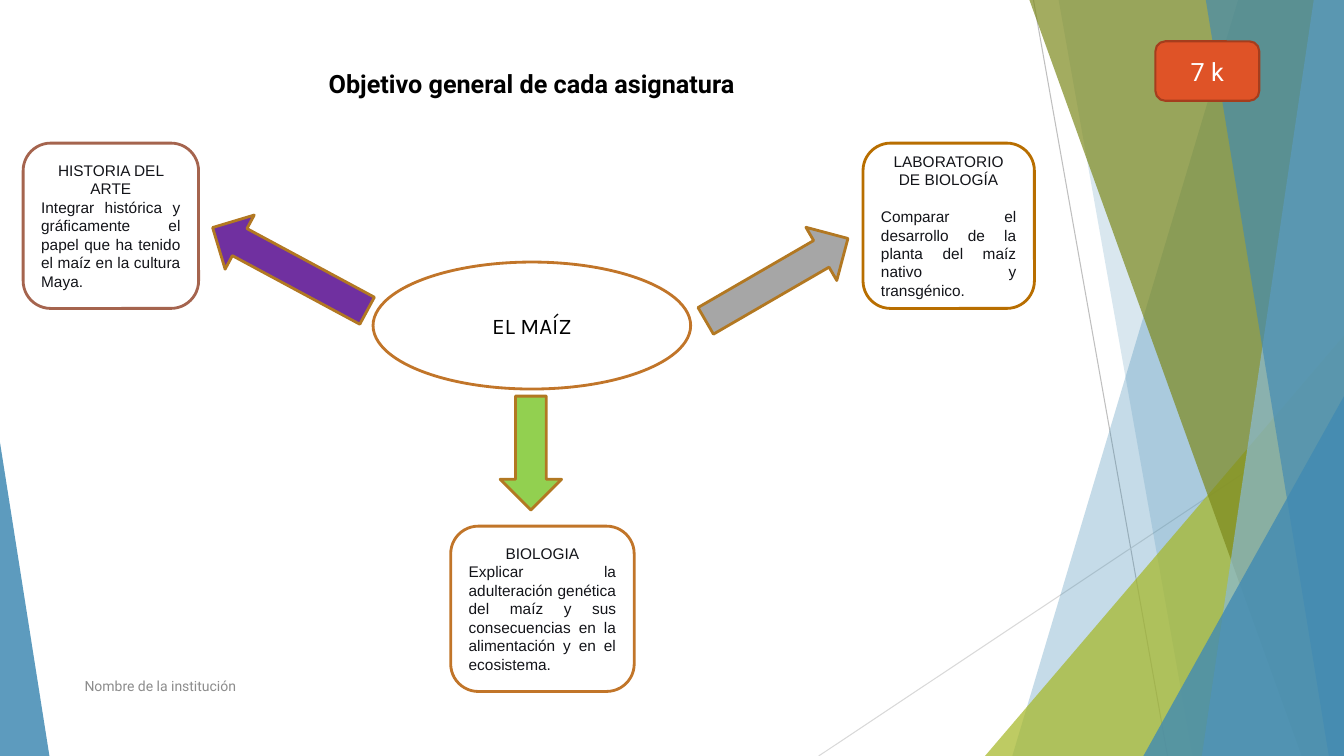
"""Build the slide that links maize to the general objective of each subject."""
from lxml import etree
from pptx import Presentation
from pptx.dml.color import RGBColor
from pptx.enum import shapes as sh, text as tx
from pptx.oxml import ns
from pptx.util import Inches, Pt

WIDTH, HEIGHT = 13.33, 7.5
WHITE = RGBColor(0xFF, 0xFF, 0xFF)
BLACK = RGBColor(0, 0, 0)
INK = RGBColor(0x13, 0x14, 0x19)
FOOTER_GRAY = RGBColor(0x8C, 0x8C, 0x8C)
RULE_DARK = RGBColor(0xBF, 0xBF, 0xBF)
RULE_LIGHT = RGBColor(0xD9, 0xD9, 0xD9)
BLUE = RGBColor(0x41, 0x8A, 0xB3)
PALE_BLUE = RGBColor(0x8A, 0xBA, 0xD4)
GREEN = RGBColor(0xA6, 0xB7, 0x27)
OLIVE = RGBColor(0x7D, 0x89, 0x1D)
ORANGE = RGBColor(0xDF, 0x53, 0x27)
RUST = RGBColor(0xA5, 0x3D, 0x1D)
COPPER = RGBColor(0xC1, 0x75, 0x29)
BROWN = RGBColor(0xA5, 0x64, 0x4E)
AMBER = RGBColor(0xB8, 0x6E, 0x00)
ARROW_EDGE = RGBColor(0xB2, 0x78, 0x22)
PURPLE = RGBColor(0x70, 0x30, 0xA0)
GRAY = RGBColor(0xA6, 0xA6, 0xA6)
LIME = RGBColor(0x92, 0xD0, 0x50)

TITLE = "Objetivo general de cada asignatura"
TOPIC = "EL MAÍZ"
FOOTER = "Nombre de la institución"
BADGE = "7 k"
SUBJECTS = [
    ("HISTORIA DEL ARTE",
     "Integrar histórica y gráficamente el papel que ha tenido el maíz en la cultura Maya.",
     (0.23, 1.42, 1.74), BROWN, 0),
    ("LABORATORIO DE BIOLOGÍA",
     "Comparar el desarrollo de la planta del maíz nativo y transgénico.",
     (8.56, 1.42, 1.7), AMBER, 13),
    ("BIOLOGIA",
     "Explicar la adulteración genética del maíz y sus consecuencias en la "
     "alimentación y en el ecosistema.",
     (4.47, 5.22, 1.82), COPPER, 0),
]
SUBJECT_HEIGHT, ARROW_WIDTH = 1.64, 0.61
ARROWS = [
    (2.57, 1.8, 1.74, 298.3, PURPLE),
    (7.4, 1.96, 1.63, 59.9, GRAY),
    (4.96, 3.93, 1.13, 180, LIME),
]
RULES = [((10.25, 0), (11.58, HEIGHT), RULE_DARK), ((WIDTH, 4.03), (8.12, HEIGHT), RULE_LIGHT)]
TOP_RIGHT, BOTTOM_RIGHT = (WIDTH, 0), (WIDTH, HEIGHT)
FACETS = [
    ([(12.28, 0), TOP_RIGHT, BOTTOM_RIGHT, (10.04, HEIGHT)], BLUE, 30),
    ([(10.5, 0), TOP_RIGHT, BOTTOM_RIGHT, (11.83, HEIGHT)], BLUE, 20),
    ([(9.77, HEIGHT), (WIDTH, 3.33), BOTTOM_RIGHT], GREEN, 72),
    ([(10.21, 0), TOP_RIGHT, BOTTOM_RIGHT, (12.91, HEIGHT)], OLIVE, 70),
    ([(13.03, 0), TOP_RIGHT, BOTTOM_RIGHT, (11.92, HEIGHT)], PALE_BLUE, 70),
    ([(11.96, 0), TOP_RIGHT, BOTTOM_RIGHT, (13.18, HEIGHT)], BLUE, 65),
    ([(11.34, HEIGHT), (WIDTH, 3.93), BOTTOM_RIGHT], BLUE, 80),
    ([(0, 4.39), (0.49, HEIGHT), (0, HEIGHT)], BLUE, 85),
]


def add_rule(slide, start, end, color):
    rule = slide.shapes.add_connector(
        sh.MSO_CONNECTOR.STRAIGHT, *(Inches(v) for v in start + end))
    rule.line.color.rgb = color
    rule.line.width = Pt(0.75)
    etree.SubElement(rule._element.spPr, ns.qn("a:effectLst"))


def add_facet(slide, corners, color, opacity):
    points = [(Inches(x), Inches(y)) for x, y in corners]
    builder = slide.shapes.build_freeform(*points[0])
    builder.add_line_segments(points[1:], close=True)
    facet = builder.convert_to_shape()
    facet.shadow.inherit = False
    facet.fill.solid()
    facet.fill.fore_color.rgb = color
    facet.line.fill.background()
    tint = facet._element.spPr.find(".//" + ns.qn("a:srgbClr"))
    etree.SubElement(tint, ns.qn("a:alpha"), val=str(opacity * 1000))


def add_outlined(slide, kind, box, fill, edge, width=2):
    outlined = slide.shapes.add_shape(kind, *(Inches(v) for v in box))
    outlined.shadow.inherit = False
    outlined.fill.solid()
    outlined.fill.fore_color.rgb = fill
    outlined.line.color.rgb = edge
    outlined.line.width = Pt(width)
    return outlined


def write(paragraph, words, color, align=tx.PP_ALIGN.CENTER, **font):
    paragraph.alignment = align
    run = paragraph.add_run()
    run.text = words
    run.font.color.rgb = color
    for key, value in font.items():
        setattr(run.font, key, value)


def set_frame(frame, anchor=tx.MSO_ANCHOR.MIDDLE):
    frame.word_wrap = True
    frame.vertical_anchor = anchor
    return frame.paragraphs[0]


def main():
    prs = Presentation()
    prs.slide_width, prs.slide_height = Inches(WIDTH), Inches(HEIGHT)
    slide = prs.slides.add_slide(prs.slide_layouts[5])

    for rule in RULES:
        add_rule(slide, *rule)
    for facet in FACETS:
        add_facet(slide, *facet)

    title = slide.shapes.title
    title.left, title.top, title.width, title.height = (
        Inches(v) for v in (3.16, 0.32, 5.09, 0.71))
    write(set_frame(title.text_frame, tx.MSO_ANCHOR.BOTTOM), TITLE, BLACK,
          tx.PP_ALIGN.LEFT, name="Roboto", size=Pt(18), bold=True)

    rounded = sh.MSO_SHAPE.ROUNDED_RECTANGLE
    body_font = {"name": "Arial", "size": Pt(11)}
    for subject, objective, place, edge, gap in SUBJECTS:
        card = add_outlined(slide, rounded, place + (SUBJECT_HEIGHT,), WHITE, edge)
        heading = set_frame(card.text_frame)
        write(heading, subject, INK, **body_font)
        heading.space_after = Pt(gap)
        write(card.text_frame.add_paragraph(), objective, INK,
              tx.PP_ALIGN.JUSTIFY, **body_font)

    topic = add_outlined(slide, sh.MSO_SHAPE.OVAL, (3.7, 2.6, 3.15, 1.26), WHITE, COPPER)
    write(set_frame(topic.text_frame), TOPIC, BLACK, name="Karla", size=Pt(16))

    for left, top, length, angle, color in ARROWS:
        arrow = add_outlined(slide, sh.MSO_SHAPE.UP_ARROW,
                             (left, top, ARROW_WIDTH, length), color, ARROW_EDGE)
        arrow.rotation = angle

    footer = slide.shapes.add_textbox(*(Inches(v) for v in (0.74, 6.61, 6.89, 0.4)))
    write(set_frame(footer.text_frame), FOOTER, FOOTER_GRAY,
          tx.PP_ALIGN.LEFT, name="Roboto", size=Pt(10))

    badge = add_outlined(slide, rounded, (11.46, 0.41, 1.03, 0.59), ORANGE, RUST, 1.5)
    write(set_frame(badge.text_frame), BADGE, WHITE, name="Roboto", size=Pt(18))

    prs.save("out.pptx")


if __name__ == "__main__":
    main()
